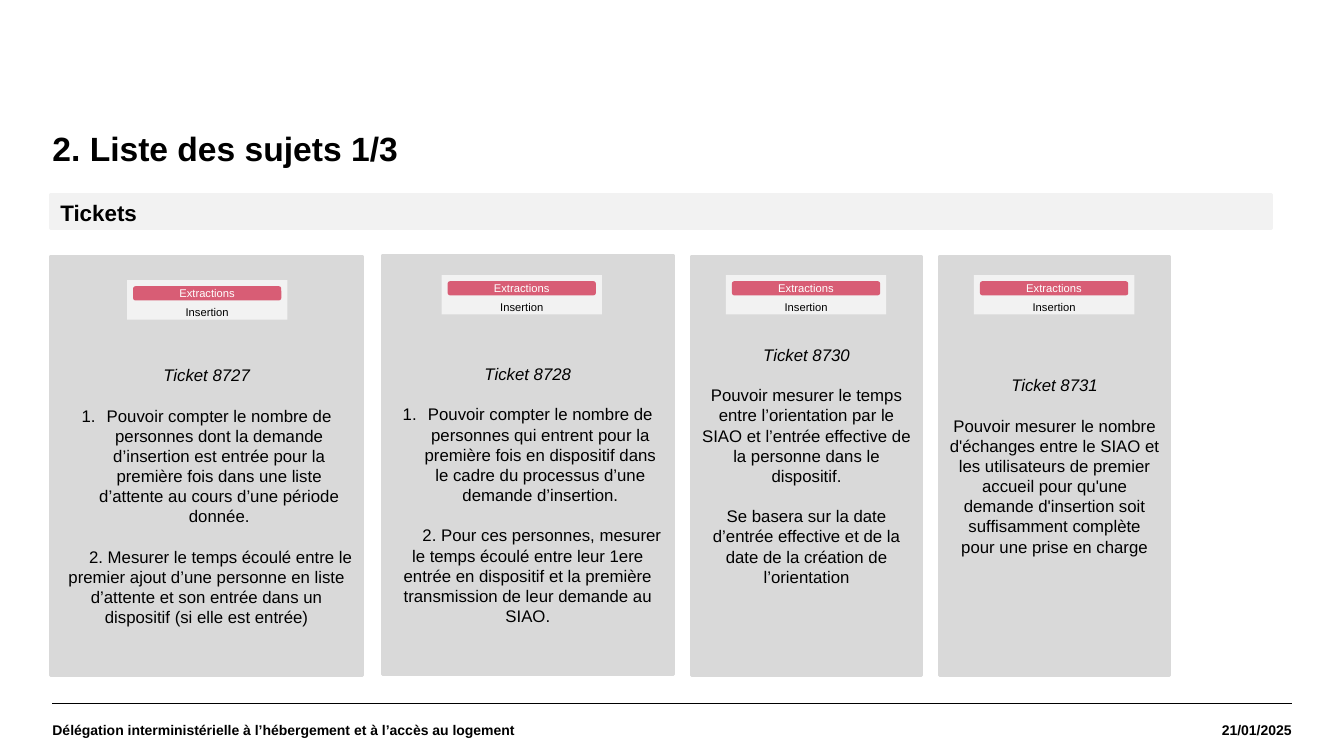
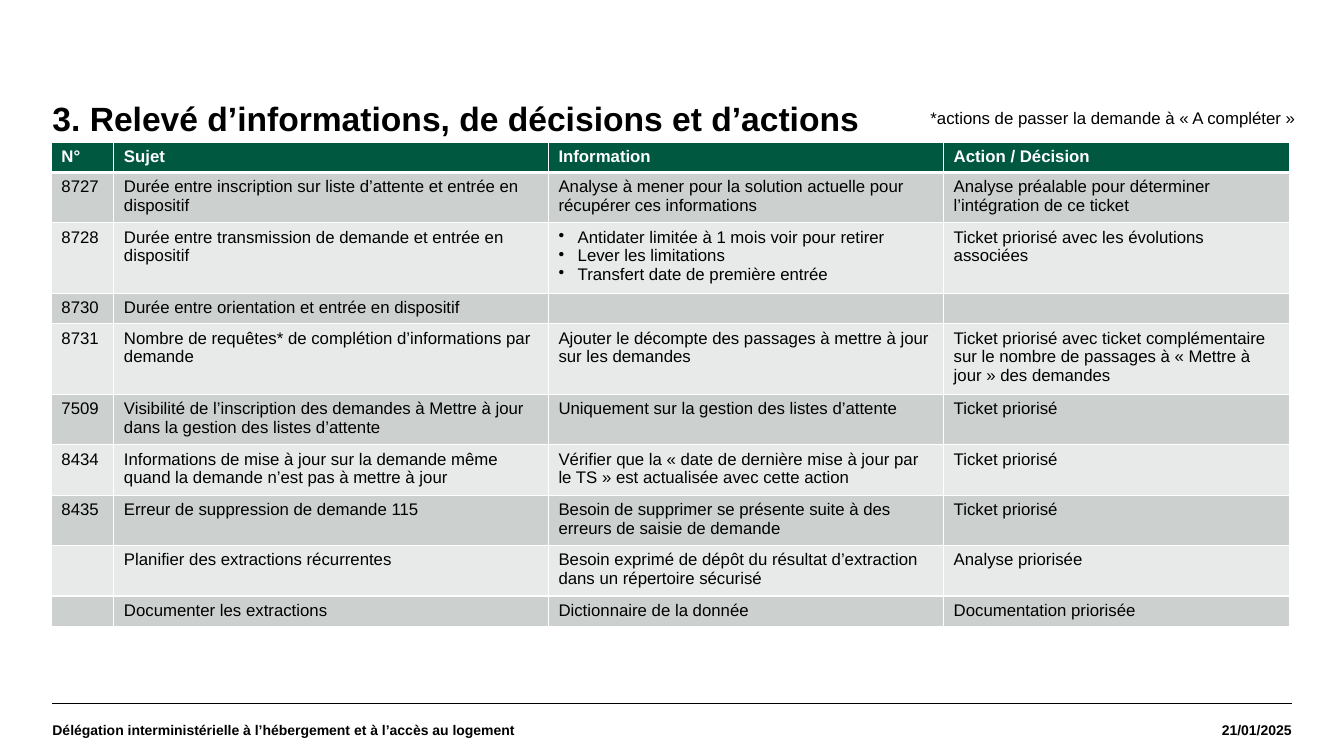
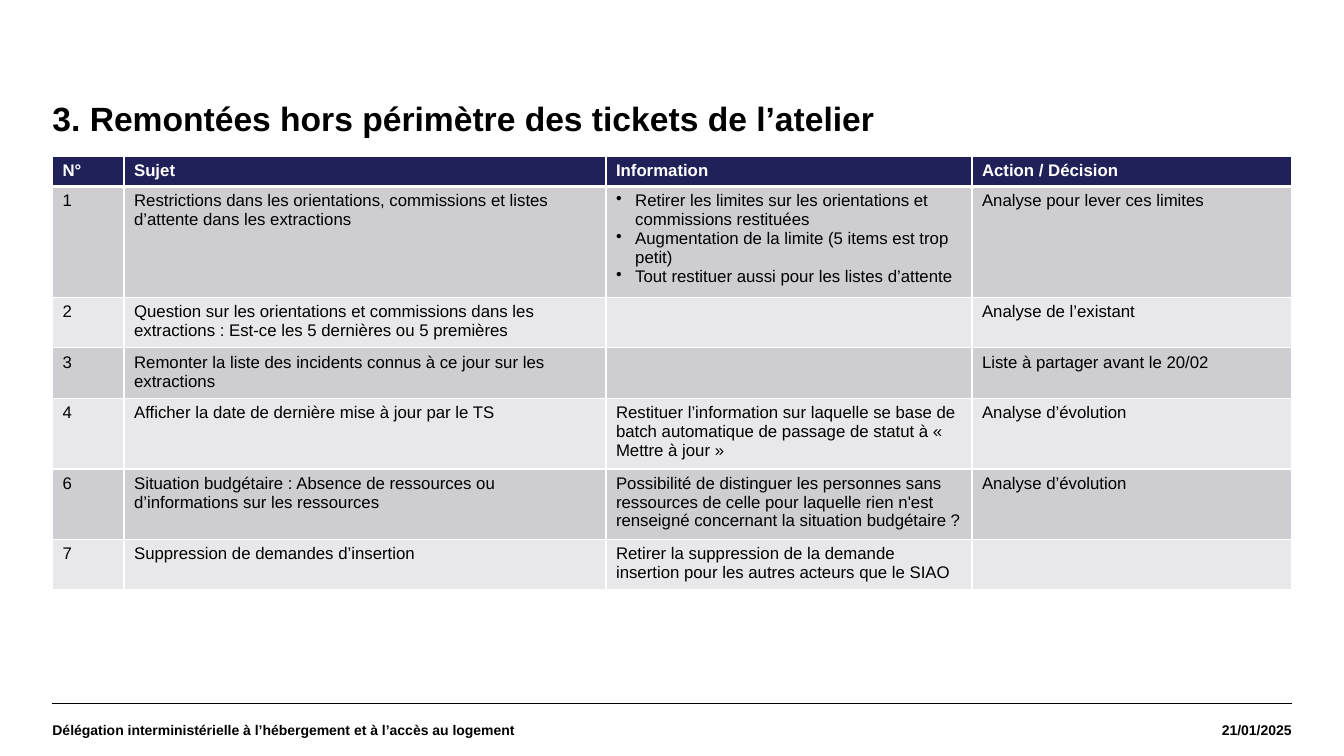
from dataclasses import dataclass

from lxml import etree
from pptx import Presentation
from pptx.dml.color import RGBColor
from pptx.enum.shapes import MSO_CONNECTOR, MSO_SHAPE
from pptx.enum.text import MSO_ANCHOR, PP_ALIGN
from pptx.oxml.ns import qn
from pptx.util import Inches, Pt

LEFT, CENTER, RIGHT = PP_ALIGN.LEFT, PP_ALIGN.CENTER, PP_ALIGN.RIGHT
TOP, MIDDLE = MSO_ANCHOR.TOP, MSO_ANCHOR.MIDDLE
RECT, ROUNDED = MSO_SHAPE.RECTANGLE, MSO_SHAPE.ROUNDED_RECTANGLE
STRAIGHT = MSO_CONNECTOR.STRAIGHT


@dataclass(frozen=True)
class Theme:
    font: str = "Arial"
    text: str = "000000"
    inverse: str = "FFFFFF"
    band: str = "F2F2F2"
    card: str = "D9D9D9"
    tag: str = "D85D75"
    green: tuple = ("005841", "CCD1CF", "E7EAE9")
    navy: tuple = ("21215A", "CDCDD2", "E8E8EA")
    title_size: int = 24
    section_size: int = 16
    body_size: int = 12
    footer_size: int = 10
    tag_size: int = 8


THEME = Theme()
MARGIN, CONTENT_WIDTH, FOOTER_TOP = 0.52, 12.28, 6.98
CARD_HEIGHT, LINE_HEIGHT, INSET = 4.16, 0.2, 0.05
BADGE_WIDTH = 1.59

FOOTER = "Délégation interministérielle à l’hébergement et à l’accès au logement"
DATE = "21/01/2025"

# Paragraph kinds: "plain", "number" (automatic 1.), "indent" (first line set in)
CARDS = [
    dict(box=(0.5, 2.54, 3.1), badge=(1.26, 2.78), lines_above=3, lines_below=0, ticket="Ticket 8727", body=[
        ("number", "Pouvoir compter le nombre de personnes dont la demande d’insertion est entrée "
                   "pour la première fois dans une liste d’attente au cours d’une période donnée."),
        ("indent", "2. Mesurer le temps écoulé entre le premier ajout d’une personne en liste "
                   "d’attente et son entrée dans un dispositif (si elle est entrée)")]),
    dict(box=(3.79, 2.53, 2.89), badge=(4.38, 2.73), lines_above=4, lines_below=1, ticket="Ticket 8728", body=[
        ("number", "Pouvoir compter le nombre de personnes qui entrent pour la première fois en "
                   "dispositif dans le cadre du processus d’une demande d’insertion."),
        ("indent", "2. Pour ces personnes, mesurer le temps écoulé entre leur 1ere entrée en "
                   "dispositif et la première transmission de leur demande au SIAO.")]),
    dict(box=(6.86, 2.54, 2.28), badge=(7.2, 2.73), lines_above=0, lines_below=0, ticket="Ticket 8730", body=[
        ("plain", "Pouvoir mesurer le temps entre l’orientation par le SIAO et l’entrée effective "
                  "de la personne dans le dispositif."),
        ("plain", "Se basera sur la date d’entrée effective et de la date de la création de "
                  "l’orientation")]),
    dict(box=(9.32, 2.54, 2.28), badge=(9.66, 2.73), lines_above=0, lines_below=0, ticket="Ticket 8731", body=[
        ("plain", "Pouvoir mesurer le nombre d'échanges entre le SIAO et les utilisateurs de "
                  "premier accueil pour qu'une demande d'insertion soit suffisamment complète "
                  "pour une prise en charge")]),
]

HEADER = ("N°", "Sujet", "Information", "Action / Décision")
# A list in a cell becomes bullets
DECISIONS = [
    ("8727", "Durée entre inscription sur liste d’attente et entrée en dispositif",
     "Analyse à mener pour la solution actuelle pour récupérer ces informations",
     "Analyse préalable pour déterminer l’intégration de ce ticket"),
    ("8728", "Durée entre transmission de demande et entrée en dispositif",
     ["Antidater limitée à 1 mois voir pour retirer", "Lever les limitations",
      "Transfert date de première entrée"],
     "Ticket priorisé avec les évolutions associées"),
    ("8730", "Durée entre orientation et entrée en dispositif", "", ""),
    ("8731", "Nombre de requêtes* de complétion d’informations par demande",
     "Ajouter le décompte des passages à mettre à jour sur les demandes",
     "Ticket priorisé avec ticket complémentaire sur le nombre de passages à "
     "« Mettre à jour » des demandes"),
    ("7509", "Visibilité de l’inscription des demandes à Mettre à jour dans la gestion des listes d’attente",
     "Uniquement sur la gestion des listes d’attente", "Ticket priorisé"),
    ("8434", "Informations de mise à jour sur la demande même quand la demande n’est pas à mettre à jour",
     "Vérifier que la « date de dernière mise à jour par le TS » est actualisée avec cette action",
     "Ticket priorisé"),
    ("8435", "Erreur de suppression de demande 115",
     "Besoin de supprimer se présente suite à des erreurs de saisie de demande", "Ticket priorisé"),
    ("", "Planifier des extractions récurrentes",
     "Besoin exprimé de dépôt du résultat d’extraction dans un répertoire sécurisé", "Analyse priorisée"),
    ("", "Documenter les extractions", "Dictionnaire de la donnée", "Documentation priorisée"),
]
OUT_OF_SCOPE = [
    ("1", "Restrictions dans les orientations, commissions et listes d’attente dans les extractions",
     ["Retirer les limites sur les orientations et commissions restituées",
      "Augmentation de la limite (5 items est trop petit)",
      "Tout restituer aussi pour les listes d’attente"],
     "Analyse pour lever ces limites"),
    ("2", "Question sur les orientations et commissions dans les extractions : "
          "Est-ce les 5 dernières ou 5 premières", "", "Analyse de l’existant"),
    ("3", "Remonter la liste des incidents connus à ce jour sur les extractions", "",
     "Liste à partager avant le 20/02"),
    ("4", "Afficher la date de dernière mise à jour par le TS",
     "Restituer l’information sur laquelle se base de batch automatique de passage de statut à "
     "« Mettre à jour »", "Analyse d’évolution"),
    ("6", "Situation budgétaire : Absence de ressources ou d’informations sur les ressources",
     "Possibilité de distinguer les personnes sans ressources de celle pour laquelle rien n'est "
     "renseigné concernant la situation budgétaire ?", "Analyse d’évolution"),
    ("7", "Suppression de demandes d’insertion",
     "Retirer la suppression de la demande insertion pour les autres acteurs que le SIAO", ""),
]


def rgb(color):
    return RGBColor.from_string(color)


def style(paragraph, size, color=THEME.text, bold=False, italic=False, align=LEFT):
    paragraph.alignment = align
    font = paragraph.font
    font.name, font.size, font.bold, font.italic = THEME.font, Pt(size), bold, italic
    font.color.rgb = rgb(color)


def indent(paragraph, first, left=0.0, bullet=None, **attributes):
    """Set the indents in inches and, if named, a bullet element."""
    properties = paragraph._p.get_or_add_pPr()
    properties.set("marL", str(Inches(left)))
    properties.set("indent", str(Inches(first)))
    if bullet:
        mark = etree.SubElement(properties, qn(bullet))
        for key, value in attributes.items():
            mark.set(key, value)


def set_frame(frame, anchor=TOP, inset=(0.1, INSET, 0.1, INSET)):
    frame.word_wrap = True
    frame.vertical_anchor = anchor
    (frame.margin_left, frame.margin_top,
     frame.margin_right, frame.margin_bottom) = map(Inches, inset)
    return frame


def add_text(slide, box, text, size, anchor=TOP, inset=(0, 0, 0, 0), **look):
    frame = set_frame(slide.shapes.add_textbox(*map(Inches, box)).text_frame, anchor, inset)
    frame.text = text
    style(frame.paragraphs[0], size, **look)
    return frame


def add_panel(slide, box, fill, outlined=False, kind=RECT):
    panel = slide.shapes.add_shape(kind, *map(Inches, box))
    panel.shadow.inherit = False
    panel.fill.solid()
    panel.fill.fore_color.rgb = rgb(fill)
    if outlined:
        panel.line.color.rgb = rgb(fill)
        panel.line.width = Pt(2)
    else:
        panel.line.fill.background()
    return panel


def add_page(deck, title, title_top):
    """Add a slide with its title, footer rule, footer text and date."""
    slide = deck.slides.add_slide(deck.slide_layouts[6])
    right = MARGIN + CONTENT_WIDTH + 0.01
    rule = slide.shapes.add_connector(
        STRAIGHT, *map(Inches, (MARGIN, FOOTER_TOP, right, FOOTER_TOP)))
    rule.line.color.rgb = rgb(THEME.text)
    rule.line.width = Pt(0.8)
    etree.SubElement(rule._element.spPr, qn("a:effectLst"))
    heading = add_text(slide, (MARGIN, title_top, CONTENT_WIDTH, 1.05), title,
                       THEME.title_size, bold=True)
    heading.paragraphs[0].line_spacing = 0.9
    add_text(slide, (11.1, FOOTER_TOP, 1.71, 0.52), DATE, THEME.footer_size, MIDDLE,
             bold=True, align=RIGHT)
    add_text(slide, (MARGIN, FOOTER_TOP, 8.61, 0.52), FOOTER, THEME.footer_size, MIDDLE, bold=True)
    return slide


def add_badge(slide, left, top):
    add_panel(slide, (left, top, BADGE_WIDTH, 0.39), THEME.band)
    tag = add_panel(slide, (left + 0.06, top + 0.06, BADGE_WIDTH - 0.12, 0.14), THEME.tag, kind=ROUNDED)
    frame = set_frame(tag.text_frame, MIDDLE, (0, 0, 0, 0))
    frame.text = "Extractions"
    style(frame.paragraphs[0], THEME.tag_size, THEME.inverse, align=CENTER)
    add_text(slide, (left, top + 0.2, BADGE_WIDTH, 0.24), "Insertion", THEME.tag_size,
             inset=(0.1, INSET, 0.1, INSET), align=CENTER)


def add_card(slide, card):
    panel = add_panel(slide, (*card["box"], CARD_HEIGHT), THEME.card, outlined=True)
    above, below = (INSET + LINE_HEIGHT * card[side] for side in ("lines_above", "lines_below"))
    frame = set_frame(panel.text_frame, MIDDLE, (0.1, above, 0.1, below))
    frame.text = card["ticket"]
    style(frame.paragraphs[0], THEME.body_size, italic=True, align=CENTER)
    for kind, text in card["body"]:
        paragraph = frame.add_paragraph()
        paragraph.text = text
        paragraph.space_before = Inches(LINE_HEIGHT)
        if kind == "number":
            indent(paragraph, -0.25, 0.25, "a:buAutoNum", type="arabicPeriod")
        elif kind == "indent":
            indent(paragraph, 0.28)
        style(paragraph, THEME.body_size, align=CENTER)
    add_badge(slide, *card["badge"])


def set_borders(cell, bottom):
    """Draw white cell borders; only the bottom width varies."""
    properties = cell._tc.get_or_add_tcPr()
    for place, (side, width) in enumerate((("L", 1), ("R", 1), ("T", 1), ("B", bottom))):
        border = etree.Element(qn(f"a:ln{side}"), w=str(Pt(width)))
        fill = etree.SubElement(border, qn("a:solidFill"))
        etree.SubElement(fill, qn("a:srgbClr"), val=THEME.inverse)
        properties.insert(place, border)


def fill_cell(cell, content, fill, is_header):
    cell.fill.solid()
    cell.fill.fore_color.rgb = rgb(fill)
    set_borders(cell, 3 if is_header else 1)
    bulleted = isinstance(content, list)
    cell.text_frame.text = "\n".join(content) if bulleted else content
    for paragraph in cell.text_frame.paragraphs:
        if bulleted:
            indent(paragraph, -0.19, 0.19, "a:buChar", char="•")
        style(paragraph, THEME.body_size, THEME.inverse if is_header else THEME.text, bold=is_header)
        if not content:
            etree.SubElement(paragraph._p, qn("a:endParaRPr"), sz=str(THEME.body_size * 100))


def add_grid(slide, left, top, widths, rows, palette):
    header_fill, *bands = palette
    rows = [HEADER, *rows]
    row_height = 0.26
    table = slide.shapes.add_table(
        len(rows), len(widths),
        *map(Inches, (left, top, sum(widths), row_height * len(rows)))).table
    for column, width in zip(table.columns, widths):
        column.width = Inches(width)
    for r, row in enumerate(rows):
        fill = bands[(r - 1) % 2] if r else header_fill
        for c, content in enumerate(row):
            fill_cell(table.cell(r, c), content, fill, r == 0)


def main():
    deck = Presentation()
    deck.slide_width, deck.slide_height = Inches(13.33), Inches(7.5)

    topics = add_page(deck, "2. Liste des sujets 1/3", 1.31)
    band = add_panel(topics, (0.5, 1.93, 12.11, 0.34), THEME.band, outlined=True)
    section = set_frame(band.text_frame)
    section.text = "Tickets"
    style(section.paragraphs[0], THEME.section_size, bold=True)
    for card in CARDS:
        add_card(topics, card)

    decisions = add_page(deck, "3. Relevé d’informations, de décisions et d’actions", 1.02)
    add_grid(decisions, 0.51, 1.41, (0.62, 4.31, 3.92, 3.43), DECISIONS, THEME.green)
    add_text(decisions, (9.13, 1.02, 4.29, 0.3), "*actions de passer la demande à « A compléter »",
             THEME.body_size, inset=(0.1, INSET, 0.1, INSET))

    feedback = add_page(deck, "3. Remontées hors périmètre des tickets de l’atelier", 1.02)
    add_grid(feedback, MARGIN, 1.55, (0.71, 4.78, 3.63, 3.17), OUT_OF_SCOPE, THEME.navy)

    deck.save("out.pptx")


if __name__ == "__main__":
    main()
